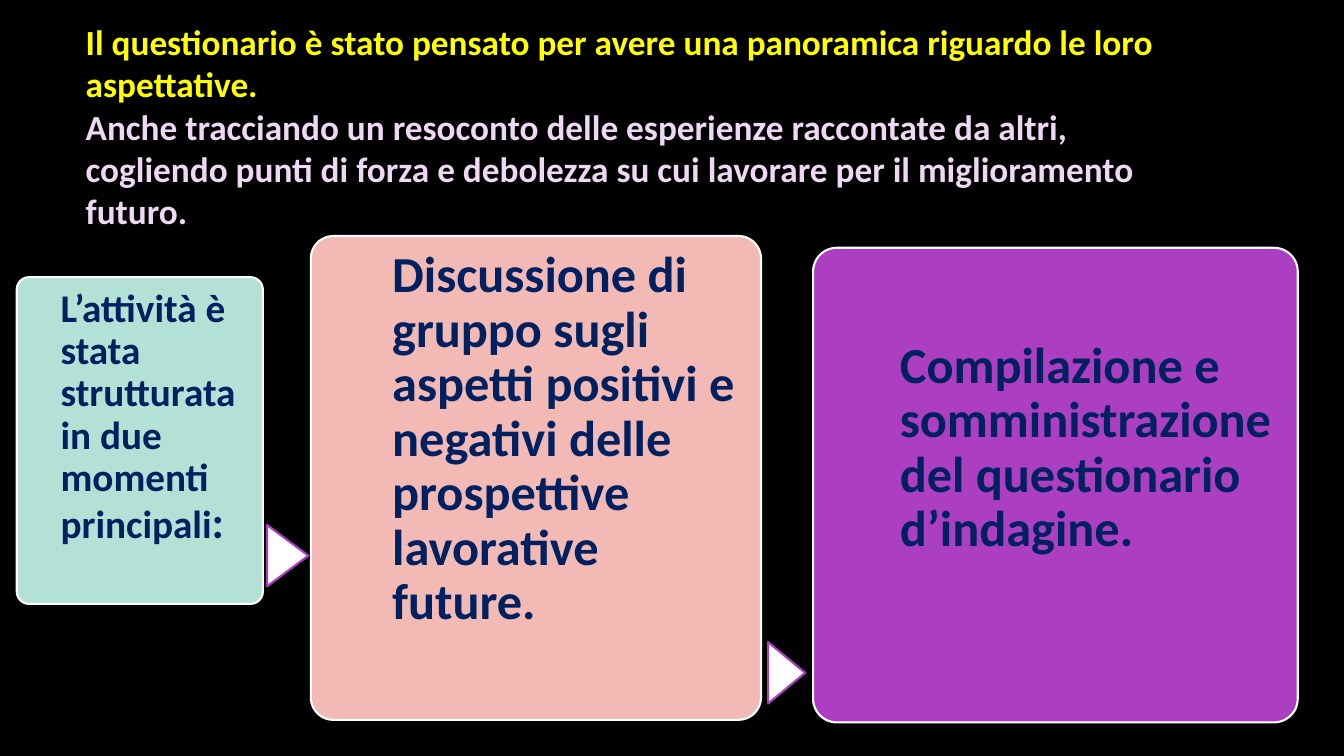
"""Build the slide on the questionnaire and the two steps of the activity."""
from pptx import Presentation
from pptx.dml.color import RGBColor
from pptx.enum.shapes import MSO_SHAPE
from pptx.enum.text import MSO_ANCHOR, PP_ALIGN
from pptx.util import Inches, Pt

UNIT = Inches(1 / 12)
COLUMNS, ROWS = 160, 90
WHITE, NAVY, PURPLE = "FFFFFF", "002060", "AC3EC1"


def grid(*counts):
    return [round(count * UNIT) for count in counts]


def paint(color_format, color):
    if hasattr(color_format, "solid"):
        color_format.solid()
        color_format = color_format.fore_color
    color_format.rgb = RGBColor.from_string(color)


deck = Presentation()
deck.slide_width, deck.slide_height = grid(COLUMNS, ROWS)
slide = deck.slides.add_slide(deck.slide_layouts[5])
paint(slide.background.fill, "000000")

intro = slide.shapes.title
intro.left, intro.top, intro.width, intro.height = grid(9, 4.7, 130, 23.4)
intro.text_frame.word_wrap = True
intro.text_frame.vertical_anchor = MSO_ANCHOR.MIDDLE
intro.text_frame.margin_bottom = Inches(0.28)
purpose = intro.text_frame.paragraphs[0]
purpose.alignment = PP_ALIGN.LEFT
sentences = [
    ("Il questionario è stato pensato per avere una panoramica riguardo le loro aspettative.", "FFFF00"),
    ("Anche tracciando un resoconto delle esperienze raccontate da altri, cogliendo punti di forza "
     "e debolezza su cui lavorare per il miglioramento futuro.", "EED8F3"),
]
for number, (sentence, color) in enumerate(sentences):
    if number:
        purpose.add_line_break()
    run = purpose.add_run()
    run.text = sentence
    for key, value in {"name": "Calibri", "size": Pt(25.2), "bold": True}.items():
        setattr(run.font, key, value)
    paint(run.font.color, color)

steps = [
    ((2, 33, 29.3, 38.9), "B4E1D6", (4.8, 0.9, 1.2, 0),
     [("L’attività è stata strutturata in due momenti principali", 28), (":", 32)]),
    ((37, 28.1, 53.6, 57.6), "F3BAB5", (8.9, 0.8, 1.3, 0),
     [("Discussione di gruppo sugli aspetti positivi e negativi delle prospettive lavorative future.", 36)]),
    ((96.8, 29.5, 57.7, 56.5), PURPLE, (9.5, 10.1, 1.3, 0),
     [("Compilazione e somministrazione del questionario d’indagine.", 36)]),
]
for place, color, insets, wording in steps:
    step = slide.shapes.add_shape(MSO_SHAPE.ROUNDED_RECTANGLE, *grid(*place))
    step.adjustments[0] = 0.05
    step.shadow.inherit = False
    paint(step.fill, color)
    paint(step.line.color, WHITE)
    step.line.width = Pt(1.5)
    frame = step.text_frame
    frame.word_wrap = True
    frame.vertical_anchor = MSO_ANCHOR.TOP
    for side, inset in zip(("left", "top", "right", "bottom"), grid(*insets)):
        setattr(frame, f"margin_{side}", inset)
    paragraph = frame.paragraphs[0]
    paragraph.alignment = PP_ALIGN.LEFT
    paragraph.line_spacing = 0.9
    for words, size in wording:
        run = paragraph.add_run()
        run.text = words
        for key, value in {"name": "Calibri", "size": Pt(size), "bold": True}.items():
            setattr(run.font, key, value)
        paint(run.font.color, NAVY)

for place in [(30.6, 63.7, 7.3, 4.9), (90, 77.9, 7.3, 4.4)]:
    pointer = slide.shapes.add_shape(MSO_SHAPE.FLOWCHART_EXTRACT, *grid(*place))
    pointer.rotation = 90
    pointer.shadow.inherit = False
    paint(pointer.fill, WHITE)
    paint(pointer.line.color, PURPLE)
    pointer.line.width = Pt(1.5)

deck.save("out.pptx")
